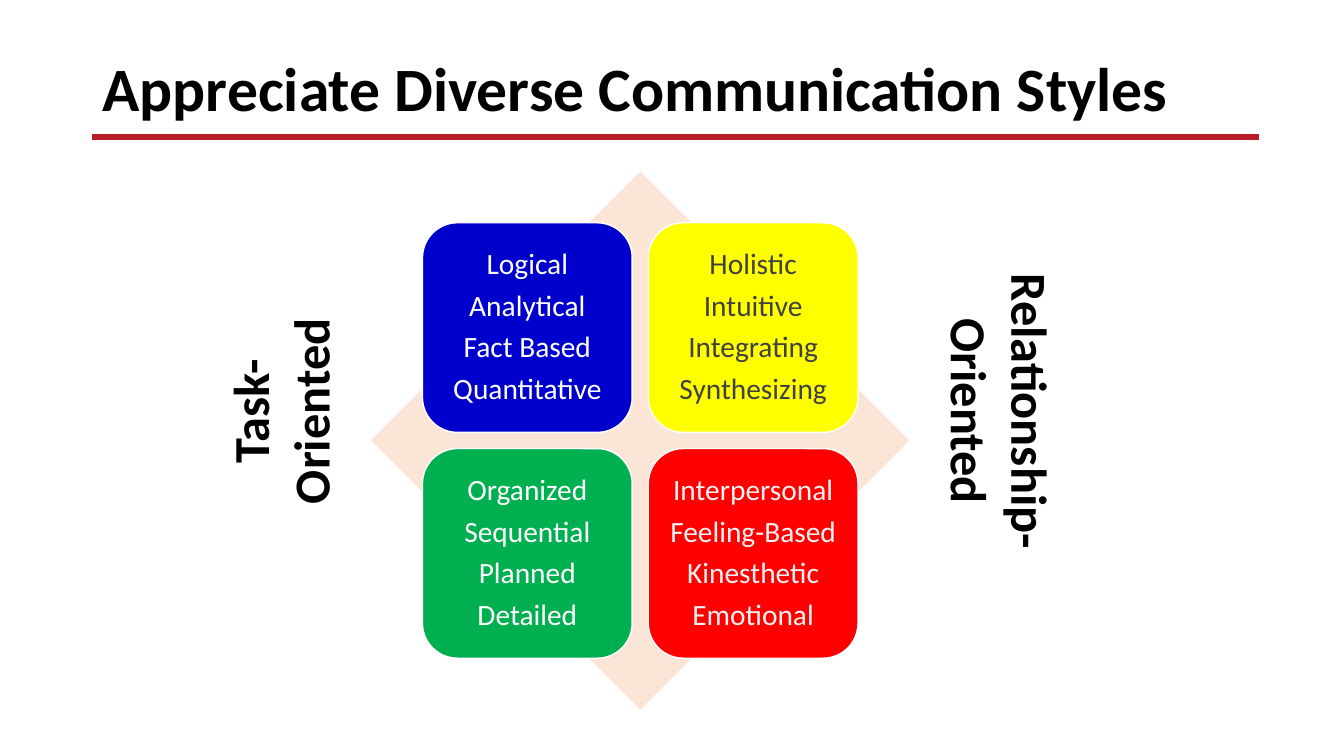
import pptx
import pptx.dml.color
import pptx.enum.shapes
import pptx.enum.text
import pptx.oxml.ns
import pptx.util
from lxml import etree

Inches = pptx.util.Inches
Pt = pptx.util.Pt
Shapes = pptx.enum.shapes.MSO_SHAPE
Anchor = pptx.enum.text.MSO_ANCHOR
Align = pptx.enum.text.PP_ALIGN

COLORS = {
    "black": "000000", "white": "FFFFFF", "rule": "BB1D28", "diamond": "FBE5D6",
    "blue": "0000CC", "yellow": "FFFF00", "green": "00B050", "red": "FF0000",
    "dark_gray": "404040", "light_gray": "F2F2F2",
}


def color(name):
    return pptx.dml.color.RGBColor.from_string(COLORS[name])


class SlideBuilder:
    font_name = "Calibri"

    def __init__(self, slide):
        self.slide = slide

    def fill_text(self, shape, lines, font_color, font, paragraph_format, frame_format):
        frame = shape.text_frame
        for key, value in {"word_wrap": True, **frame_format}.items():
            setattr(frame, key, value)
        frame.text = "\n".join(lines)
        for paragraph in frame.paragraphs:
            for key, value in paragraph_format.items():
                setattr(paragraph, key, value)
            for key, value in {"name": self.font_name, **font}.items():
                setattr(paragraph.font, key, value)
            paragraph.font.color.rgb = color(font_color)

    def text(self, box, text, size, paragraph_format, frame_format, direction="horz"):
        shape = self.slide.shapes.add_textbox(*map(Inches, box))
        self.fill_text(shape, [text], "black", {"size": Pt(size), "bold": True},
                       paragraph_format, frame_format)
        shape.text_frame._txBody.bodyPr.set("vert", direction)

    def shape(self, kind, box, fill, outline=None):
        shape = self.slide.shapes.add_shape(kind, *map(Inches, box))
        shape.shadow.inherit = False
        shape.fill.solid()
        shape.fill.fore_color.rgb = color(fill)
        if outline:
            shape.line.color.rgb = color(outline)
            shape.line.width = Pt(1)
        else:
            shape.line.fill.background()
        return shape

    def card(self, box, fill, font_color, lines):
        shape = self.shape(Shapes.ROUNDED_RECTANGLE, box, fill, "white")
        margins = {f"margin_{side}": Inches(0.09)
                   for side in ("left", "top", "right", "bottom")}
        self.fill_text(shape, lines, font_color, {"size": Pt(21)},
                       {"alignment": Align.CENTER, "line_spacing": 0.9, "space_after": Pt(7)},
                       {"vertical_anchor": Anchor.MIDDLE, **margins})

    def line(self, start, end, line_color, width):
        connector = self.slide.shapes.add_connector(
            pptx.enum.shapes.MSO_CONNECTOR.STRAIGHT, *map(Inches, start + end))
        connector.line.color.rgb = color(line_color)
        connector.line.width = Pt(width)
        etree.SubElement(connector._element.spPr, pptx.oxml.ns.qn("a:effectLst"))


def main():
    presentation = pptx.Presentation()
    presentation.slide_width = Inches(13.33)
    presentation.slide_height = Inches(7.5)
    builder = SlideBuilder(presentation.slides.add_slide(presentation.slide_layouts[6]))

    # Title and rule
    builder.line((0.91, 1.36), (12.49, 1.36), "rule", 4.5)
    builder.text((0.92, 0.3, 11.5, 0.99), "Appreciate Diverse Communication Styles", 44,
                 {"line_spacing": 0.9}, {"vertical_anchor": Anchor.BOTTOM})

    # Four styles on a diamond
    builder.shape(Shapes.DIAMOND, (3.68, 1.7, 5.34, 5.34), "diamond")
    styles = [
        ("blue", "white", ["Logical", "Analytical", "Fact Based", "Quantitative"]),
        ("yellow", "dark_gray", ["Holistic", "Intuitive", "Integrating", "Synthesizing"]),
        ("green", "white", ["Organized", "Sequential", "Planned", "Detailed"]),
        ("red", "light_gray", ["Interpersonal", "Feeling-Based", "Kinesthetic", "Emotional"]),
    ]
    card_size, pitch = 2.08, 2.24
    for index, (fill, font_color, lines) in enumerate(styles):
        row, column = divmod(index, 2)
        box = (4.19 + column * pitch, 2.21 + row * pitch, card_size, card_size)
        builder.card(box, fill, font_color, lines)

    # Rotated side labels
    for box, label, direction in [
        ((9.17, 2.48, 1.41, 3.2), "Relationship-Oriented", "vert"),
        ((2.12, 3.05, 1.41, 2.06), "Task-Oriented", "vert270"),
    ]:
        builder.text(box, label, 36, {"alignment": Align.CENTER}, {}, direction)

    presentation.save("out.pptx")


if __name__ == "__main__":
    main()
